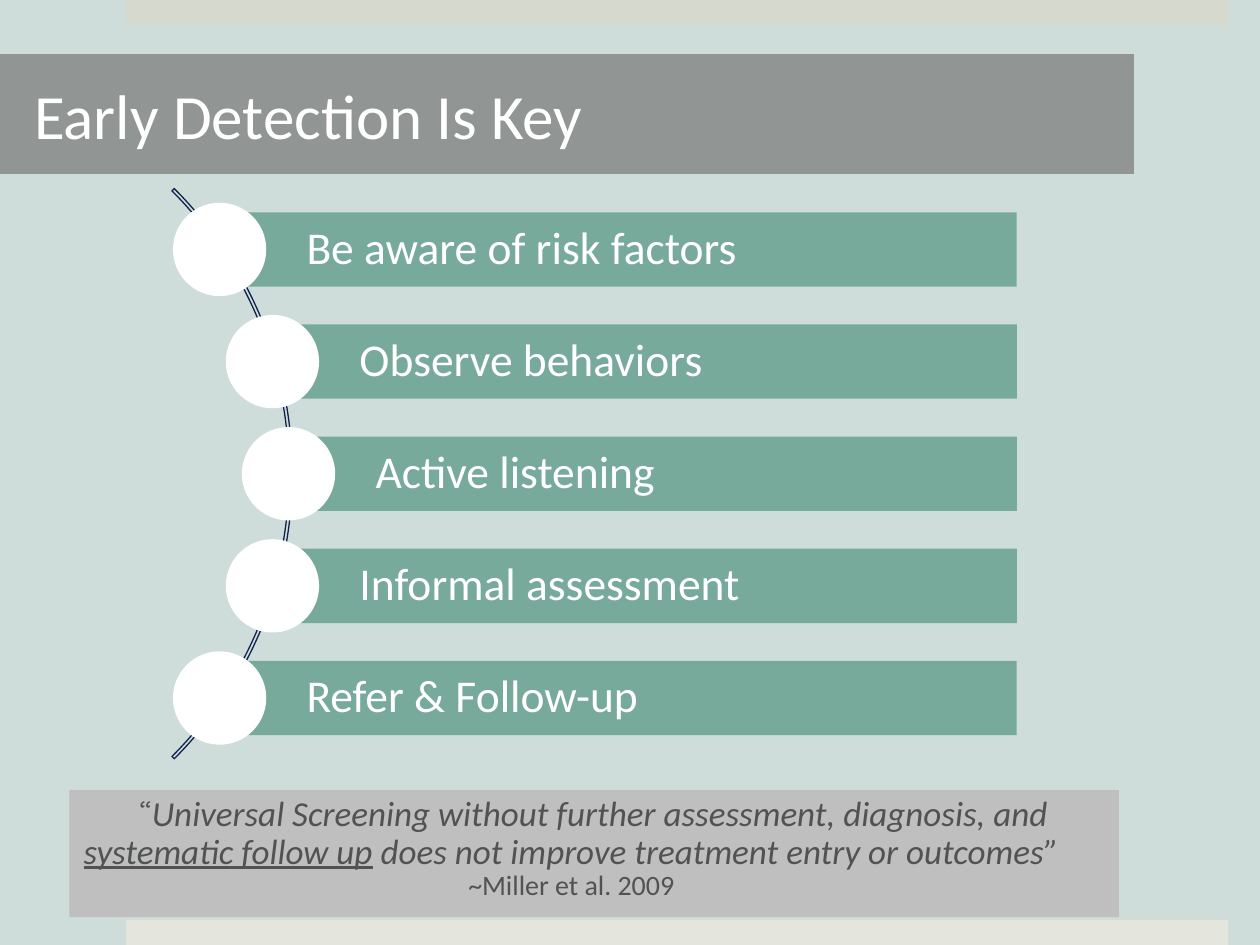
from math import sqrt

from lxml import etree
from pptx import Presentation
from pptx.dml.color import RGBColor
from pptx.enum.shapes import MSO_SHAPE
from pptx.enum.text import MSO_ANCHOR, MSO_AUTO_SIZE, PP_ALIGN
from pptx.oxml.ns import qn
from pptx.util import Inches, Pt

RECT, OVAL, ARC = MSO_SHAPE.RECTANGLE, MSO_SHAPE.OVAL, MSO_SHAPE.BLOCK_ARC
TOP, MIDDLE = MSO_ANCHOR.TOP, MSO_ANCHOR.MIDDLE
LEFT, CENTER = PP_ALIGN.LEFT, PP_ALIGN.CENTER
NO_FIT = MSO_AUTO_SIZE.NONE

TITLE = "Early Detection Is Key"
STEPS = [
    "Be aware of risk factors",
    "Observe behaviors",
    "Active listening",
    "Informal assessment",
    "Refer & Follow-up",
]
QUOTE = [
    ("“", {"font": "Quicksand"}),
    ("Universal Screening without further assessment, diagnosis, and ", {"italic": True}),
    ("systematic follow up", {"italic": True, "underline": True}),
    (" does not improve treatment entry or outcomes”", {"italic": True}),
]
CREDIT = "~Miller et al. 2009"

WHITE, QUOTE_INK = "FFFFFF", "515252"
BACKDROP, BAR_FILL, ARC_INK = "CFDDDA", "78AA9C", "10224E"
TITLE_FILL, TITLE_ALPHA, QUOTE_FILL = "7D7D7D", 75, "BFBFBF"
EDGE_BANDS = [(0, "D6D9CD"), (7.3, "E4E6DE")]

ARC_CENTER_X, ARC_CENTER_Y, ARC_RADIUS = -0.88, 3.76, 3.2
DOT_ORBIT, DOT_SIZE = 3.17, 0.74
STEP_PITCH, BAR_HEIGHT, BAR_RIGHT = 0.89, 0.59, 8.07
QUOTE_SHIFT = 0.36


def rgb(value):
    return RGBColor.from_string(value)


def add_block(slide, kind, box, fill=None):
    block = slide.shapes.add_shape(kind, *(Inches(v) for v in box))
    block.shadow.inherit = False
    block.line.fill.background()
    if fill:
        block.fill.solid()
        block.fill.fore_color.rgb = rgb(fill)
    else:
        block.fill.background()
    return block


def set_frame(shape, anchor, left, other):
    frame = shape.text_frame
    frame.word_wrap = True
    frame.auto_size = NO_FIT
    frame.vertical_anchor = anchor
    frame.margin_left = Inches(left)
    frame.margin_top = frame.margin_right = frame.margin_bottom = Inches(other)
    return frame


def add_run(paragraph, text, size, color, font="Calibri", italic=False, underline=False):
    run = paragraph.add_run()
    run.text = text
    run.font.size = Pt(size)
    run.font.name = font
    run.font.color.rgb = rgb(color)
    run.font.italic = italic
    run.font.underline = underline


def format_title(slide):
    title = slide.shapes.title
    title.left, title.top, title.width, title.height = (
        Inches(v) for v in (0, 0.43, 9, 0.95))
    title.fill.solid()
    title.fill.fore_color.rgb = rgb(TITLE_FILL)
    tint = title.fill._xPr.find(qn("a:solidFill"))[0]
    etree.SubElement(tint, qn("a:alpha")).set("val", str(TITLE_ALPHA * 1000))
    paragraph = set_frame(title, MIDDLE, 0.27, 0.05).paragraphs[0]
    paragraph.alignment = LEFT
    add_run(paragraph, TITLE, 36, WHITE)


def add_quote(slide):
    panel = add_block(slide, RECT, (0.55, 6.27, 8.33, 1.01), QUOTE_FILL)
    frame = set_frame(panel, TOP, 0.05, 0.05)
    quote, credit = frame.paragraphs[0], frame.add_paragraph()
    for paragraph in (quote, credit):
        paragraph.alignment = CENTER
        paragraph.line_spacing = 0.9
    for side in ("marR", "indent"):
        quote._p.get_or_add_pPr().set(side, str(Inches(QUOTE_SHIFT)))
    for text, style in QUOTE:
        add_run(quote, text, 20, QUOTE_INK, **style)
    add_run(credit, CREDIT, 16, QUOTE_INK)


def add_steps(slide):
    arc = add_block(slide, ARC, (ARC_CENTER_X - ARC_RADIUS, ARC_CENTER_Y - ARC_RADIUS,
                                 2 * ARC_RADIUS, 2 * ARC_RADIUS))
    for index, value in enumerate((189, 27, 0.004)):
        arc.adjustments[index] = value
    arc.line.color.rgb = rgb(ARC_INK)
    arc.line.width = Pt(0.75)

    for index, step in enumerate(STEPS):
        offset = (index - (len(STEPS) - 1) / 2) * STEP_PITCH
        x = ARC_CENTER_X + sqrt(DOT_ORBIT ** 2 - offset ** 2)
        y = ARC_CENTER_Y + offset
        bar = add_block(slide, RECT, (x, y - BAR_HEIGHT / 2, BAR_RIGHT - x, BAR_HEIGHT), BAR_FILL)
        label = set_frame(bar, MIDDLE, 0.69, 0.07).paragraphs[0]
        label.alignment = LEFT
        label.line_spacing = 0.9
        add_run(label, step, 26, WHITE)
        add_block(slide, OVAL, (x - DOT_SIZE / 2, y - DOT_SIZE / 2, DOT_SIZE, DOT_SIZE), WHITE)


def main():
    deck = Presentation()
    deck.slide_width, deck.slide_height = Inches(10), Inches(7.5)
    slide = deck.slides.add_slide(deck.slide_layouts[5])
    slide.background.fill.solid()
    slide.background.fill.fore_color.rgb = rgb(BACKDROP)
    for top, fill in EDGE_BANDS:
        add_block(slide, RECT, (1, top, 8.75, 0.2), fill)
    add_quote(slide)
    format_title(slide)
    add_steps(slide)
    deck.save("out.pptx")


if __name__ == "__main__":
    main()
